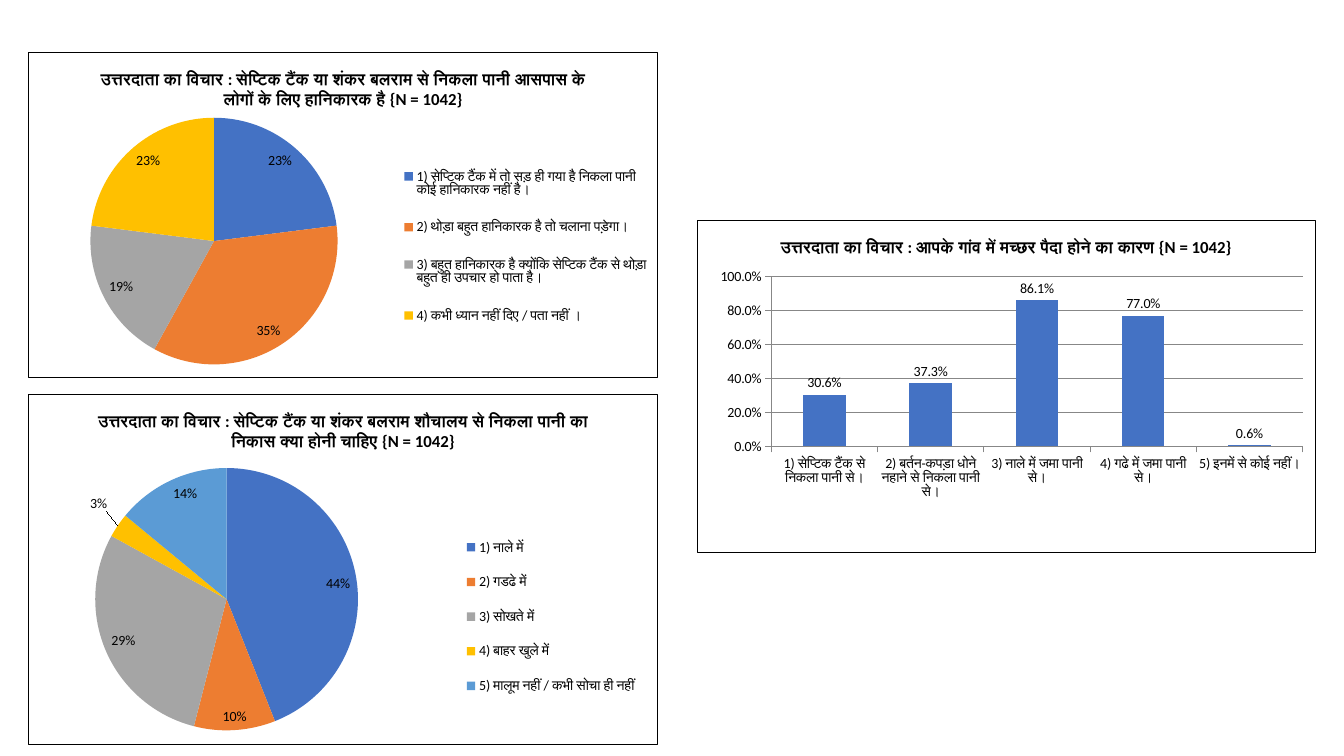
from dataclasses import dataclass

from lxml import etree
from pptx import Presentation
from pptx import util as u
from pptx.chart import data as chart_data
from pptx.dml import color
from pptx.enum import chart as ch
from pptx.oxml import ns


@dataclass(frozen=True)
class Theme:
    font: str = "Calibri"
    title_size: int = 12
    body_size: int = 10
    ink: str = "000000"
    paper: str = "FFFFFF"
    grid_line: str = "878787"
    slices: tuple = ("4472C4", "ED7D31", "A5A5A5", "FFC000", "5B9BD5")


def rgb(value):
    return color.RGBColor.from_string(value)


def add_child(parent, tag, **attributes):
    return etree.SubElement(parent, ns.qn(tag), attributes)


def set_layout(element, index, box, **modes):
    """Put a manual layout in a chart part; box holds shares of the chart (x, y, w, h)."""
    for old in element.findall(ns.qn("c:layout")):
        element.remove(old)
    layout = etree.Element(ns.qn("c:layout"))
    manual = add_child(layout, "c:manualLayout")
    for tag, value in modes.items():
        add_child(manual, f"c:{tag}", val=value)
    for tag, value in zip("xywh", box):
        add_child(manual, f"c:{tag}", val=str(value))
    element.insert(index, layout)


class ChartSlide:
    COLUMNS, ROWS = 96, 54

    def __init__(self, presentation, theme):
        self.theme = theme
        self.slide = presentation.slides.add_slide(presentation.slide_layouts[6])
        self.column = presentation.slide_width / self.COLUMNS
        self.row = presentation.slide_height / self.ROWS

    def add_chart(self, kind, box, title, values, plot_box, number_format):
        """Add a framed, titled chart; box is in grid columns and rows."""
        theme = self.theme
        left, top, width, height = box
        data = chart_data.CategoryChartData(number_format=number_format)
        data.categories = list(values)
        data.add_series("Series 1", list(values.values()))
        frame = self.slide.shapes.add_chart(
            kind, int(left * self.column), int(top * self.row),
            int(width * self.column), int(height * self.row), data)
        chart = frame.chart
        chart.font.name = theme.font
        chart.font.size = u.Pt(theme.body_size)
        chart.font.color.rgb = rgb(theme.ink)
        chart.has_legend = False
        self.set_title(chart, title)
        self.add_border(chart)
        plot_area = chart.plots[0]._element.getparent()
        set_layout(plot_area, 0, plot_box,
                   layoutTarget="inner", xMode="edge", yMode="edge")
        return chart

    def set_title(self, chart, title):
        chart.has_title = True
        chart.chart_title.include_in_layout = False
        paragraph = chart.chart_title.text_frame.paragraphs[0]
        paragraph.text = title
        font = paragraph.runs[0].font
        font.name, font.size, font.bold = self.theme.font, u.Pt(self.theme.title_size), True
        font.color.rgb = rgb(self.theme.ink)

    def add_border(self, chart):
        space = chart._chartSpace
        properties = etree.Element(ns.qn("c:spPr"))
        fill = add_child(properties, "a:solidFill")
        add_child(fill, "a:srgbClr", val=self.theme.paper)
        line = add_child(properties, "a:ln", w=str(u.Pt(0.75)))
        add_child(add_child(line, "a:solidFill"), "a:srgbClr", val=self.theme.ink)
        space.find(ns.qn("c:chart")).addnext(properties)

    def add_pie(self, box, title, values, plot_box, legend_box, outside=()):
        """Add a pie; the slices listed in outside get their label beyond the rim."""
        chart = self.add_chart(ch.XL_CHART_TYPE.PIE, box, title, values, plot_box, "General")
        chart.has_legend = True
        chart.legend.position = ch.XL_LEGEND_POSITION.RIGHT
        chart.legend.include_in_layout = False
        set_layout(chart.legend._element, 1, legend_box, xMode="edge", yMode="edge")
        series = chart.plots[0].series[0]
        for index, slice_color in zip(range(len(values)), self.theme.slices):
            fill = series.points[index].format.fill
            fill.solid()
            fill.fore_color.rgb = rgb(slice_color)
        labels = series.data_labels
        labels.show_value, labels.show_percentage = False, True
        labels.number_format, labels.number_format_is_linked = "0%", False
        labels.position = ch.XL_LABEL_POSITION.INSIDE_END
        for index in outside:
            series.points[index].data_label.position = ch.XL_LABEL_POSITION.OUTSIDE_END
        for label in labels._element.findall(ns.qn("c:dLbl")):
            label.find(ns.qn("c:showVal")).set("val", "0")
            label.find(ns.qn("c:showPercent")).set("val", "1")
            set_layout(label, 1, (-0.01, -0.03))

    def add_columns(self, box, title, values, plot_box):
        theme = self.theme
        percent = "0.0%"
        chart = self.add_chart(ch.XL_CHART_TYPE.COLUMN_CLUSTERED, box, title, values,
                               plot_box, percent)
        plot = chart.plots[0]
        plot.gap_width = 150
        plot.vary_by_categories = False
        series = plot.series[0]
        series.format.fill.solid()
        series.format.fill.fore_color.rgb = rgb(theme.slices[0])
        labels = series.data_labels
        labels.show_value = True
        labels.number_format, labels.number_format_is_linked = percent, False
        labels.position = ch.XL_LABEL_POSITION.OUTSIDE_END
        axis = chart.value_axis
        axis.minimum_scale, axis.maximum_scale, axis.major_unit = 0, 1, 0.2
        axis.has_major_gridlines = True
        axis.tick_labels.number_format = percent
        axis.tick_labels.number_format_is_linked = False
        lines = [axis.major_gridlines.format.line]
        for each in (axis, chart.category_axis):
            each.major_tick_mark = ch.XL_TICK_MARK.OUTSIDE
            lines.append(each.format.line)
        for line in lines:
            line.color.rgb = rgb(theme.grid_line)
            line.width = u.Pt(0.75)


def main():
    presentation = Presentation()
    presentation.slide_width, presentation.slide_height = u.Inches(13.33), u.Inches(7.5)
    page = ChartSlide(presentation, Theme())
    page.add_pie(
        (2, 3.74, 45, 23.26),
        "उत्तरदाता का विचार : सेप्टिक टैंक या शंकर बलराम से निकला पानी आसपास के "
        "लोगों के लिए हानिकारक है {N = 1042}",
        {"1) सेप्टिक टैंक में तो सड़ ही गया है निकला पानी कोई हानिकारक नहीं है।": 23,
         "2) थोड़ा बहुत हानिकारक है तो चलाना पड़ेगा।": 35,
         "3) बहुत हानिकारक है क्योंकि सेप्टिक टैंक से थोड़ा बहुत ही उपचार हो पाता है।": 19,
         "4) कभी ध्यान नहीं दिए / पता नहीं ।": 23},
        plot_box=(0.09, 0.2, 0.41, 0.76), legend_box=(0.59, 0.29, 0.4, 0.61))
    page.add_pie(
        (2, 28.15, 45, 25.06),
        "उत्तरदाता का विचार : सेप्टिक टैंक या शंकर बलराम शौचालय से निकला पानी का "
        "निकास क्या होनी चाहिए {N = 1042}",
        {"1) नाले में": 44, "2) गडढे में": 10, "3) सोखते में": 29,
         "4) बाहर खुले में": 3, "5) मालूम नहीं / कभी सोचा ही नहीं": 14},
        plot_box=(0.1, 0.21, 0.43, 0.75), legend_box=(0.68, 0.36, 0.3, 0.55), outside=[3])
    page.add_columns(
        (49.76, 15.7, 44.21, 23.83),
        "उत्तरदाता का विचार : आपके गांव में मच्छर पैदा होने का कारण {N = 1042}",
        {"1) सेप्टिक टैंक से निकला पानी से।": 0.306,
         "2) बर्तन-कपड़ा धोने नहाने से निकला पानी से।": 0.373,
         "3) नाले में जमा पानी से।": 0.861,
         "4) गढे में जमा पानी से।": 0.77,
         "5) इनमें से कोई नहीं।": 0.006},
        plot_box=(0.12, 0.17, 0.86, 0.51))
    presentation.save("out.pptx")


if __name__ == "__main__":
    main()
